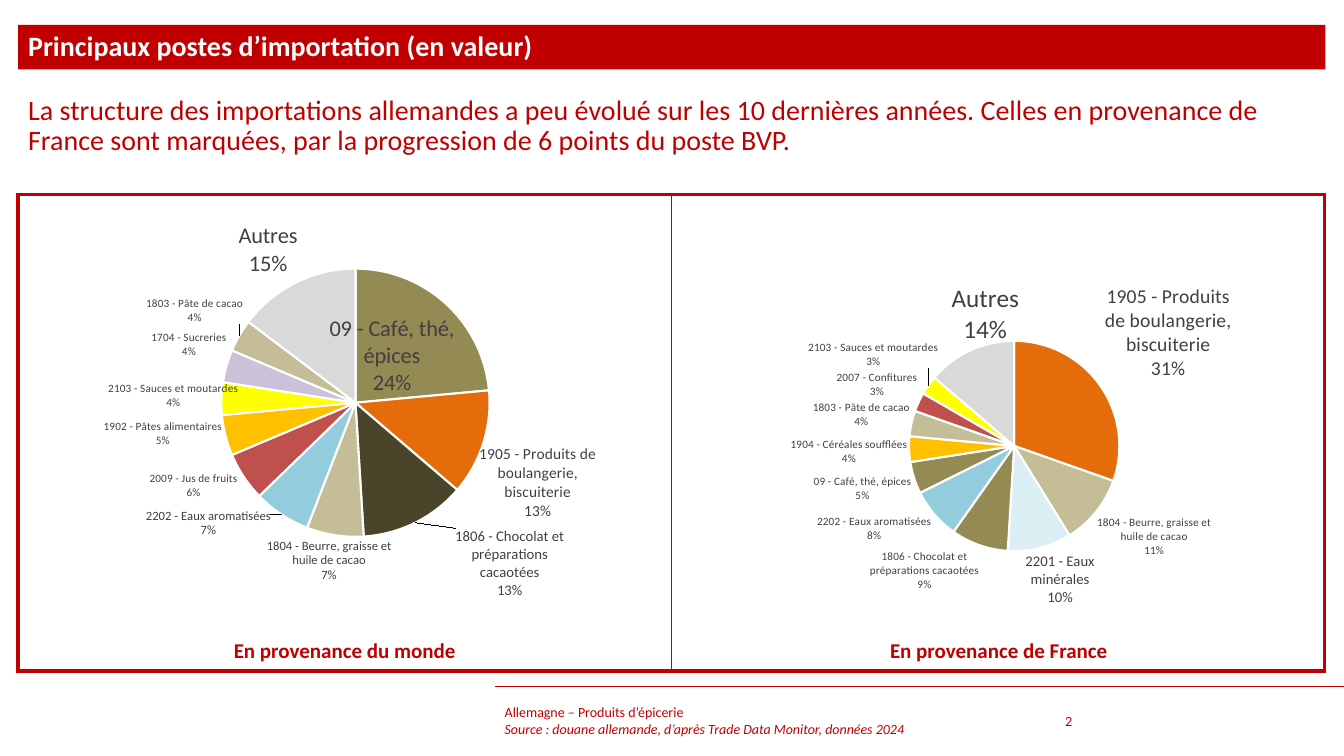
from math import cos, pi, sin

from lxml import etree
from pptx import Presentation
from pptx.chart.data import CategoryChartData
from pptx.dml.color import RGBColor
from pptx.enum.chart import XL_CHART_TYPE, XL_LABEL_POSITION
from pptx.enum.shapes import MSO_CONNECTOR, MSO_SHAPE
from pptx.enum.text import MSO_ANCHOR, PP_ALIGN
from pptx.oxml import parse_xml
from pptx.oxml.ns import qn
from pptx.util import Cm, Pt

PIE = XL_CHART_TYPE.PIE
OUTSIDE = XL_LABEL_POSITION.OUTSIDE_END
TOP, MIDDLE = MSO_ANCHOR.TOP, MSO_ANCHOR.MIDDLE
LEFT, CENTER = PP_ALIGN.LEFT, PP_ALIGN.CENTER

FONT = "Calibri"
RED = RGBColor(0xC0, 0x00, 0x00)
WHITE = RGBColor(0xFF, 0xFF, 0xFF)
BLACK = RGBColor(0x00, 0x00, 0x00)
LABEL_GREY = RGBColor(0x40, 0x40, 0x40)
OLIVE = RGBColor(0x94, 0x8A, 0x54)
ORANGE = RGBColor(0xE4, 0x6C, 0x0A)
BROWN = RGBColor(0x4A, 0x45, 0x2A)
BEIGE = RGBColor(0xC4, 0xBD, 0x97)
BLUE = RGBColor(0x93, 0xCD, 0xDD)
PALE_BLUE = RGBColor(0xDB, 0xEE, 0xF4)
BRICK = RGBColor(0xC0, 0x50, 0x4D)
AMBER = RGBColor(0xFF, 0xC0, 0x00)
YELLOW = RGBColor(0xFF, 0xFF, 0x00)
LILAC = RGBColor(0xCC, 0xC1, 0xDA)
SILVER = RGBColor(0xD9, 0xD9, 0xD9)

TITLE = "Principaux postes d’importation (en valeur)"
MESSAGE = ("La structure des importations allemandes a peu évolué sur les 10 dernières "
           "années. Celles en provenance de France sont marquées, par la progression "
           "de 6 points du poste BVP.")
SUBJECT = "Allemagne – Produits d’épicerie"
SOURCE = "Source : douane allemande, d’après Trade Data Monitor, données 2024"
PAGE = "2"

# Slices: category, share, colour, label size (pt), label centre x and y, width (cm), lines
WORLD = [
    ("09 - Café, thé, épices", 0.24, OLIVE, 16, 9.68, 8.97, 2.75, 3),
    ("1905 - Produits de boulangerie, biscuiterie", 0.13, ORANGE, 11, 13.68, 12.17, 3.2, 4),
    ("1806 - Chocolat et préparations cacaotées", 0.13, BROWN, 10.5, 12.95, 14.22, 2.95, 4),
    ("1804 - Beurre, graisse et huile de cacao", 0.07, BEIGE, 9, 8.24, 14.16, 3.25, 3),
    ("2202 - Eaux aromatisées", 0.07, BLUE, 9, 5.85, 13.4, 1.95, 3),
    ("2009 - Jus de fruits", 0.06, BRICK, 8, 4.69, 12.25, 2.6, 2),
    ("1902 - Pâtes alimentaires", 0.05, AMBER, 8, 4.7, 11.11, 1.8, 3),
    ("2103 - Sauces et moutardes", 0.04, YELLOW, 8, 4.86, 9.98, 2.3, 3),
    ("1704 - Sucreries", 0.04, LILAC, 8, 4.56, 8.69, 2.3, 2),
    ("1803 - Pâte de cacao", 0.04, BEIGE, 8, 4.71, 7.84, 2.85, 2),
    ("Autres", 0.15, SILVER, 16, 6.65, 6.3, 1.7, 2),
]
FRANCE = [
    ("1905 - Produits de boulangerie, biscuiterie", 0.31, ORANGE, 14, 29.41, 8.09, 3.13, 5),
    ("1804 - Beurre, graisse et huile de cacao", 0.11, BEIGE, 8, 29.3, 13.53, 3.3, 3),
    ("2201 - Eaux minérales", 0.1, PALE_BLUE, 10.5, 26.82, 14.62, 1.95, 3),
    ("1806 - Chocolat et préparations cacaotées", 0.09, OLIVE, 8, 23.08, 14.39, 3.2, 3),
    ("2202 - Eaux aromatisées", 0.08, BLUE, 8, 21.8, 13.33, 3.35, 2),
    ("09 - Café, thé, épices", 0.05, OLIVE, 8, 21.52, 12.32, 2.9, 2),
    ("1904 - Céréales soufflées", 0.04, AMBER, 8, 21.77, 11.39, 2.2, 3),
    ("1803 - Pâte de cacao", 0.04, BEIGE, 8, 21.51, 10.46, 2.85, 2),
    ("2007 - Confitures", 0.03, BRICK, 8, 21.92, 9.7, 2.4, 2),
    ("2103 - Sauces et moutardes", 0.03, YELLOW, 8, 22.5, 8.77, 2.3, 3),
    ("Autres", 0.14, SILVER, 18, 24.73, 7.91, 1.9, 2),
]
# Panels: caption, caption box, slices, chart frame, pie centre x and y, radius (cm)
PANELS = [
    ("En provenance du monde", (0.46, 15.93, 16.46, 0.9), WORLD,
     (0.46, 4.9, 16.41, 10.77), (8.96, 10.15, 3.38)),
    ("En provenance de France", (16.94, 15.95, 16.46, 0.9), FRANCE,
     (16.87, 4.85, 16.54, 10.82), (25.56, 11.24, 2.65)),
]
LABEL_GAP = 0.15
LINE_HEIGHT = 1.22 * 2.54 / 72
C_NS = 'xmlns:c="http://schemas.openxmlformats.org/drawingml/2006/chart"'
C15_NS = 'xmlns:c15="http://schemas.microsoft.com/office/drawing/2012/chart"'


def write(shape, lines, size, colour=RED, align=LEFT, anchor=TOP, spacing=None):
    """Fill a shape with lines given as (text, bold, italic)."""
    frame = shape.text_frame
    frame.word_wrap = True
    frame.vertical_anchor = anchor
    for i, (text, bold, italic) in enumerate(lines):
        paragraph = frame.add_paragraph() if i else frame.paragraphs[0]
        paragraph.alignment = align
        if spacing:
            paragraph.line_spacing = spacing
        run = paragraph.add_run()
        run.text = text
        font = run.font
        font.name, font.size, font.bold, font.italic = FONT, Pt(size), bold, italic
        font.color.rgb = colour


def add_text(slide, box, lines, size, **style):
    write(slide.shapes.add_textbox(*map(Cm, box)), lines, size, **style)


def set_border(cell, sides):
    """Draw cell edges; sides are (tag, points) in the order L, R, T, B."""
    properties = cell._tc.get_or_add_tcPr()
    for i, (side, points) in enumerate(sides):
        edge = etree.Element(qn(f"a:ln{side}"), w=str(Pt(points)))
        fill = etree.SubElement(edge, qn("a:solidFill"))
        etree.SubElement(fill, qn("a:srgbClr"), val=str(RED))
        properties.insert(i, edge)


def layout_xml(**parts):
    values = "".join(f'<c:{tag} val="{value}"/>' for tag, value in parts.items())
    return f"<c:layout {C_NS}><c:manualLayout>{values}</c:manualLayout></c:layout>"


def label_offset(angle, pie, centre, size):
    """Distance from the usual place outside the slice to the wanted centre."""
    pie_x, pie_y, radius = pie
    offsets = []
    for origin, direction, wanted, extent in zip(
            (pie_x, pie_y), (sin(angle), -cos(angle)), centre, size):
        side = 0 if abs(direction) < 0.09 else (1 if direction > 0 else -1)
        usual = origin + (radius + LABEL_GAP) * direction + side * extent / 2
        offsets.append(wanted - usual)
    return offsets


def add_pie(slide, slices, frame, pie):
    left, top, width, height = frame
    pie_x, pie_y, radius = pie
    data = CategoryChartData(number_format="0%")
    data.categories = [item[0] for item in slices]
    data.add_series("Series 1", [item[1] for item in slices])
    chart = slide.shapes.add_chart(PIE, *map(Cm, frame), data).chart
    chart.has_legend = chart.has_title = False
    chart.font.name, chart.font.size = FONT, Pt(8)
    chart.font.color.rgb = BLACK
    plot = chart.plots[0]
    plot.vary_by_categories = True
    series = plot.series[0]

    area = chart._chartSpace.chart.plotArea
    for old in area.findall(qn("c:layout")):
        area.remove(old)
    area.insert(0, parse_xml(layout_xml(
        layoutTarget="inner", xMode="edge", yMode="edge",
        x=round((pie_x - radius - left) / width, 4), y=round((pie_y - radius - top) / height, 4),
        w=round(2 * radius / width, 4), h=round(2 * radius / height, 4))))

    labels = series.data_labels
    labels.show_value = labels.show_category_name = True
    labels.number_format, labels.number_format_is_linked = "0%", False
    labels.position = OUTSIDE
    labels.font.name, labels.font.size = FONT, Pt(8)
    labels.font.color.rgb = LABEL_GREY

    total = sum(item[1] for item in slices)
    done = 0
    for i, (_, share, colour, size, x, y, label_width, lines) in enumerate(slices):
        point = series.points[i]
        point.format.fill.solid()
        point.format.fill.fore_color.rgb = colour
        point.format.line.color.rgb = WHITE
        point.format.line.width = Pt(1.5)
        label = point.data_label
        label.font.name, label.font.size = FONT, Pt(size)
        label.font.color.rgb = LABEL_GREY
        label.position = OUTSIDE

        label_height = lines * size * LINE_HEIGHT
        angle = 2 * pi * (done + share / 2) / total
        done += share
        dx, dy = label_offset(angle, pie, (x, y), (label_width, label_height))
        node = labels._element.findall(qn("c:dLbl"))[i]
        node.find(qn("c:showCatName")).set("val", "1")
        node.insert(1, parse_xml(layout_xml(x=round(dx / width, 4), y=round(dy / height, 4))))
        node.insert(2, parse_xml(f'<c:numFmt {C_NS} formatCode="0%" sourceLinked="0"/>'))
        etree.SubElement(node, qn("c:separator")).text = "\n"
        extent = layout_xml(w=round(label_width / width, 4), h=round(label_height / height, 4))
        node.append(parse_xml(
            f'<c:extLst {C_NS}><c:ext {C15_NS} uri="{{CE6537A1-D6FC-4f65-9D91-7224C49458BB}}">'
            + extent.replace("c:layout", "c15:layout") + "</c:ext></c:extLst>"))


def main():
    deck = Presentation()
    deck.slide_width, deck.slide_height = Cm(33.87), Cm(19.05)
    slide = deck.slides.add_slide(deck.slide_layouts[6])

    rule = slide.shapes.add_connector(
        MSO_CONNECTOR.STRAIGHT, Cm(33.87), Cm(17.3), Cm(12.47), Cm(17.3))
    rule.line.color.rgb, rule.line.width = RED, Pt(0.5)
    etree.SubElement(rule._element.spPr, qn("a:effectLst"))

    table = slide.shapes.add_table(1, 2, Cm(0.46), Cm(4.9), Cm(32.92), Cm(12.01)).table
    table.first_row = table.horz_banding = False
    for column, (left, right) in enumerate([(3, 1), (1, 3)]):
        cell = table.cell(0, column)
        cell.fill.background()
        set_border(cell, [("L", left), ("R", right), ("T", 3), ("B", 3)])

    banner = slide.shapes.add_shape(MSO_SHAPE.RECTANGLE, Cm(0.46), Cm(0.63), Cm(32.94), Cm(1.12))
    banner.shadow.inherit = False
    banner.fill.solid()
    banner.fill.fore_color.rgb = RED
    banner.line.fill.background()
    write(banner, [(TITLE, True, False)], 20, colour=WHITE, anchor=MIDDLE, spacing=0.9)
    add_text(slide, (0.46, 2.29, 32.92, 2.06), [(MESSAGE, False, False)], 20, spacing=0.9)

    for caption, box, slices, frame, pie in PANELS:
        add_text(slide, box, [(caption, True, False)], 15, align=CENTER)
        add_pie(slide, slices, frame, pie)

    add_text(slide, (12.47, 17.65, 13.79, 1.02),
             [(SUBJECT, False, False), (SOURCE, False, True)], 10, anchor=MIDDLE)
    add_text(slide, (26.59, 17.65, 2.51, 1.02), [(PAGE, False, False)], 10, anchor=MIDDLE)
    deck.save("out.pptx")


if __name__ == "__main__":
    main()
